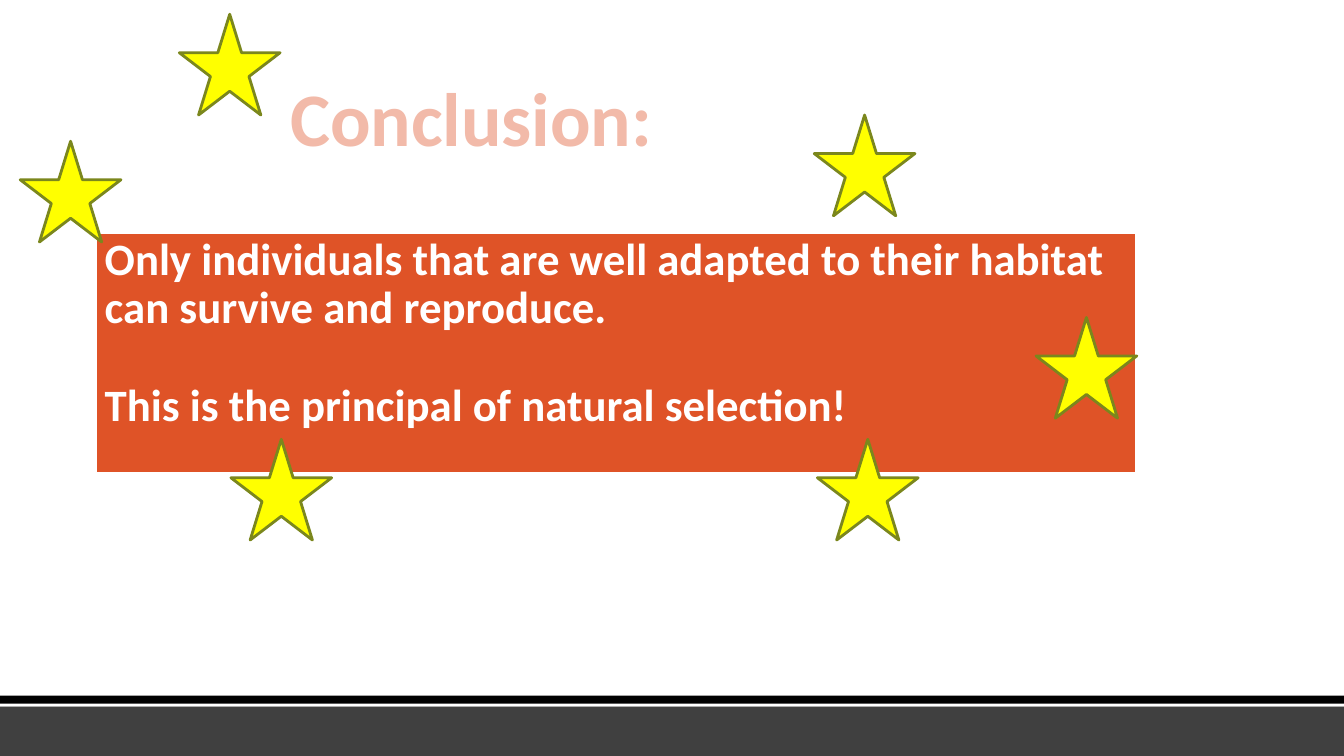
from typing import NamedTuple

from lxml import etree
from pptx import Presentation
from pptx import util as u
from pptx.dml.color import RGBColor
from pptx.enum import shapes, text
from pptx.oxml import ns

FONT = "Calibri"
ORANGE, PEACH, WHITE = "DF5327", "F2BAA9", "FFFFFF"
YELLOW, OLIVE = "FFFF00", "7B871D"
WIDTH, HEIGHT = 33.87, 19.05
STAR_SIZE = 2.54


class Band(NamedTuple):
    top: float
    height: float
    color: str


class Star(NamedTuple):
    left: float
    top: float


BANDS = [
    Band(17.78, 1.27, "404040"),
    Band(17.53, 0.28, "000000"),
    Band(17.73, 0.08, WHITE),
]

STARS = [
    Star(0.51, 3.56),
    Star(20.52, 2.9),
    Star(5.82, 11.07),
    Star(20.6, 11.07),
    Star(26.11, 8),
    Star(4.52, 0.36),
]


def rgb(value: str) -> RGBColor:
    return RGBColor.from_string(value)


def add_shape(s, kind, left: float, top: float, width: float, height: float,
              fill: str, line: str = "", line_width: float = 0):
    sp = s.shapes.add_shape(kind, u.Cm(left), u.Cm(top), u.Cm(width), u.Cm(height))
    sp.shadow.inherit = False
    sp.fill.solid()
    sp.fill.fore_color.rgb = rgb(fill)
    if line:
        sp.line.color.rgb = rgb(line)
        sp.line.width = u.Pt(line_width)
    else:
        sp.line.fill.background()
    return sp


def write(sp, *lines: str, size: float, color: str, gap: float = 0,
          outline: str = "", outline_width: float = 0) -> None:
    tf = sp.text_frame
    tf.word_wrap = True
    tf.vertical_anchor = text.MSO_ANCHOR.TOP
    for i, line in enumerate(lines):
        p = tf.add_paragraph() if i else tf.paragraphs[0]
        p.alignment = text.PP_ALIGN.LEFT
        p.line_spacing = 0.9
        p.space_before = u.Pt(gap if i else 0)
        r = p.add_run()
        r.text = line
        r.font.name, r.font.size, r.font.bold = FONT, u.Pt(size), True
        r.font.color.rgb = rgb(color)
        if outline:
            ln = etree.Element(ns.qn("a:ln"), w=str(u.Pt(outline_width)))
            fill = etree.SubElement(ln, ns.qn("a:solidFill"))
            etree.SubElement(fill, ns.qn("a:srgbClr"), val=outline)
            r.font._element.insert(0, ln)


def main() -> None:
    prs = Presentation()
    prs.slide_width, prs.slide_height = u.Cm(WIDTH), u.Cm(HEIGHT)
    s = prs.slides.add_slide(prs.slide_layouts[6])
    rect = shapes.MSO_SHAPE.RECTANGLE

    # Bands along the bottom edge
    for band in BANDS:
        add_shape(s, rect, 0, band.top, WIDTH, band.height, band.color)

    # Title
    title = s.shapes.add_textbox(u.Cm(7.06), u.Cm(1.93), u.Cm(21.59), u.Cm(3.25))
    write(title, "Conclusion:", size=54, color=PEACH,
          outline=ORANGE, outline_width=1.75)

    # Conclusion panel
    panel = add_shape(s, rect, 2.39, 5.84, 26.26, 6.1, ORANGE, WHITE, 3)
    write(panel,
          "Only individuals that are well adapted to their habitat can survive and reproduce.",
          "This is the principal of natural selection!",
          size=32, color=WHITE, gap=35)

    # Stars
    for star in STARS:
        add_shape(s, shapes.MSO_SHAPE.STAR_5_POINT, star.left, star.top,
                  STAR_SIZE, STAR_SIZE, YELLOW, OLIVE, 2)

    prs.save("out.pptx")


if __name__ == "__main__":
    main()
